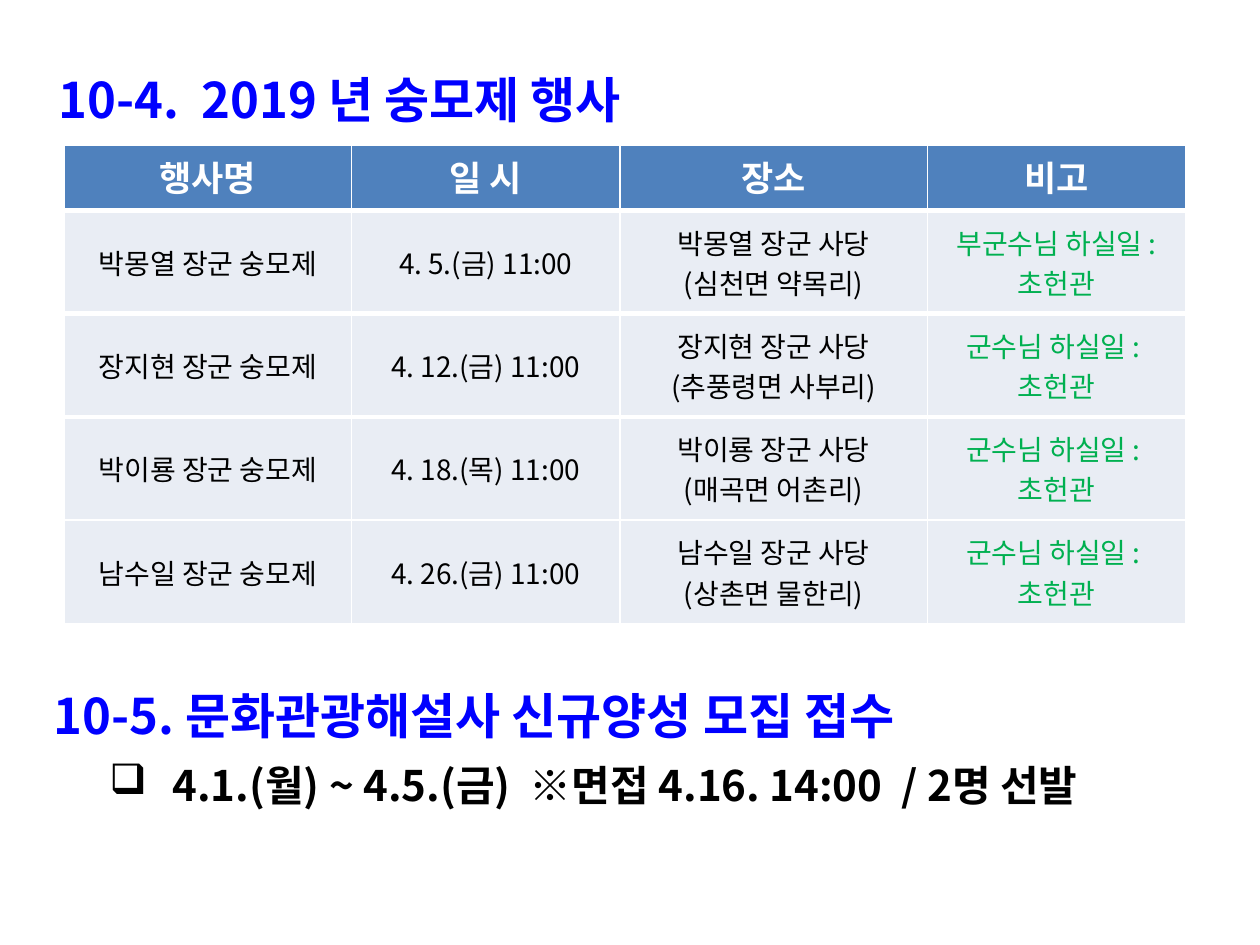
import pptx
import pptx.dml.color
import pptx.enum.text
import pptx.oxml.ns
import pptx.util
from lxml import etree

FONT = "Noto Sans CJK KR"
BLUE, BLACK, WHITE, GREEN = "0000FF", "000000", "FFFFFF", "00B050"
HEADER_FILL, BODY_FILL = "4F81BD", "E9EDF4"
UNIT = 0.1  # inches per grid column and row

HEADERS = ["행사명", "일 시", "장소", "비고"]
EVENTS = [
    ("박몽열", "4. 5.(금) 11:00", "심천면 약목리", ["부군수님 하실일 : 초헌관"]),
    ("장지현", "4. 12.(금) 11:00", "추풍령면 사부리", ["군수님 하실일 : ", "초헌관"]),
    ("박이룡", "4. 18.(목) 11:00", "매곡면 어촌리", ["군수님 하실일 : ", "초헌관"]),
    ("남수일", "4. 26.(금) 11:00", "상촌면 물한리", ["군수님 하실일 : ", "초헌관"]),
]
RULE_WIDTHS = [1, 3, 3, 3, 1, 1]  # horizontal rules from top to bottom, points


def color(value):
    return pptx.dml.color.RGBColor.from_string(value)


def grid(units):
    return pptx.util.Inches(units * UNIT)


def add_element(parent, tag, **attributes):
    element = etree.SubElement(parent, pptx.oxml.ns.qn(tag))
    for name, value in attributes.items():
        element.set(name, str(value))
    return element


class SlideBuilder:
    def __init__(self, deck):
        self.slide = deck.slides.add_slide(deck.slide_layouts[6])

    def run(self, para, text, size, hex_color, bold):
        span = para.add_run()
        span.text = text
        span.font.name = FONT
        span.font.size = pptx.util.Pt(size)
        span.font.bold = bold
        span.font.color.rgb = color(hex_color)
        add_element(span.font._element, "a:ea", typeface=FONT)

    def text_box(self, left, top, width, height):
        box = self.slide.shapes.add_textbox(*map(grid, (left, top, width, height)))
        box.text_frame.word_wrap = True
        return box.text_frame

    def hanging(self, para, margin, hang):
        """Indent a paragraph, with its first line hanging to the left."""
        para.line_spacing = 1.3
        properties = para._p.get_or_add_pPr()
        properties.set("marL", str(grid(margin)))
        properties.set("indent", str(-grid(hang)))
        return properties

    def heading(self, frame, text):
        para = frame.paragraphs[0]
        para.space_before = pptx.util.Pt(5.6)
        self.hanging(para, 5.6, 5)
        self.run(para, text, 28, BLUE, True)

    def bullet(self, frame, text):
        para = frame.add_paragraph()
        properties = self.hanging(para, 10, 5)
        bullet_color = add_element(properties, "a:buClr")
        add_element(bullet_color, "a:srgbClr", val=BLACK)
        add_element(properties, "a:buChar", char="❑")
        self.run(para, text, 24, BLACK, True)

    def borders(self, cell, top, bottom):
        properties = cell._tc.get_or_add_tcPr()
        for side, points in (("L", 1), ("R", 1), ("T", top), ("B", bottom)):
            line = add_element(properties, f"a:ln{side}", w=pptx.util.Pt(points))
            fill = add_element(line, "a:solidFill")
            add_element(fill, "a:srgbClr", val=WHITE)

    def cell(self, cell, lines, size, hex_color, bold, fill, rules):
        self.borders(cell, *rules)
        cell.fill.solid()
        cell.fill.fore_color.rgb = color(fill)
        frame = cell.text_frame
        for index, line in enumerate(lines):
            para = frame.add_paragraph() if index else frame.paragraphs[0]
            para.alignment = pptx.enum.text.PP_ALIGN.CENTER
            self.run(para, line, size, hex_color, bold)

    def table(self, left, top, widths, heights, headers, rows):
        frame = self.slide.shapes.add_table(
            len(heights), len(widths),
            *map(grid, (left, top, sum(widths), sum(heights))))
        table = frame.table
        for column, width in zip(table.columns, widths):
            column.width = grid(width)
        for row, height in zip(table.rows, heights):
            row.height = grid(height)
        for column, header in enumerate(headers):
            self.cell(table.cell(0, column), [header], 20, WHITE, True,
                      HEADER_FILL, RULE_WIDTHS[:2])
        for row, contents in enumerate(rows, start=1):
            for column, lines in enumerate(contents):
                cell = table.cell(row, column)
                cell.vertical_anchor = pptx.enum.text.MSO_ANCHOR.MIDDLE
                hex_color = GREEN if column == len(headers) - 1 else BLACK
                self.cell(cell, lines, 16, hex_color, False,
                          BODY_FILL, RULE_WIDTHS[row:row + 2])


def main():
    deck = pptx.Presentation()
    deck.slide_width, deck.slide_height = grid(100), grid(75)
    builder = SlideBuilder(deck)

    title = builder.text_box(3.1, 3.6, 96.9, 6.3)
    builder.heading(title, "10-4.  2019 년 숭모제 행사")

    rows = [
        ([f"{name} 장군 숭모제"], [time], [f"{name} 장군 사당", f"({place})"], duty)
        for name, time, place, duty in EVENTS
    ]
    builder.table(5.1, 11.5, [22.8, 21.3, 24.4, 20.5],
                  [5.2] + [8.2] * len(rows), HEADERS, rows)

    recruitment = builder.text_box(2.7, 52.5, 92.9, 14)
    builder.heading(recruitment, "10-5. 문화관광해설사 신규양성 모집 접수")
    builder.bullet(recruitment, "4.1.(월) ~ 4.5.(금)  ※면접 4.16. 14:00  / 2명 선발")

    deck.save("out.pptx")


if __name__ == "__main__":
    main()
